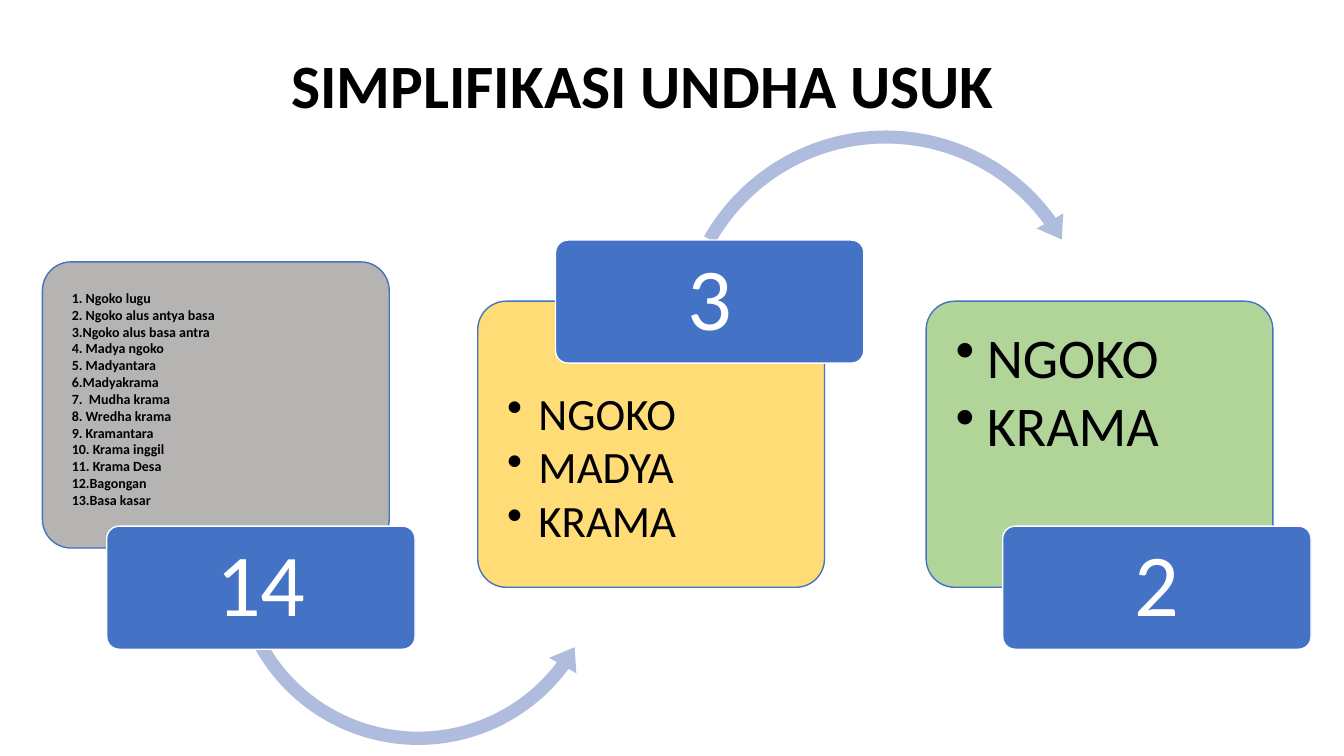
import lxml.etree
import pptx
import pptx.dml.color
import pptx.enum.shapes
import pptx.enum.text
import pptx.oxml.ns
import pptx.util

Cm, Pt = pptx.util.Cm, pptx.util.Pt
qn = pptx.oxml.ns.qn
SHAPE = pptx.enum.shapes.MSO_SHAPE
ALIGN = pptx.enum.text.PP_ALIGN
ANCHOR = pptx.enum.text.MSO_ANCHOR

COLORS = {
    "gray": "AFABAB", "yellow": "FFD966", "green": "A9D18E",
    "blue": "4472C4", "arrow": "B0BCDE", "black": "000000", "white": "FFFFFF",
}
PANEL_SIZE = (8.74, 7.21)
CARD_SIZE = (7.77, 3.1)
VARIETIES = [
    " Ngoko lugu", " Ngoko alus antya basa", "Ngoko alus basa antra",
    " Madya ngoko", " Madyantara", "Madyakrama", "  Mudha krama",
    " Wredha krama", " Kramantara", " Krama inggil", " Krama Desa",
    "Bagongan", "Basa kasar",
]
STAGES = [
    {"panel": (1.07, 6.6), "color": "gray", "lines": VARIETIES, "size": 10,
     "bold": True, "top": 0.53, "hang": 0.16, "bullet": ("buAutoNum", "type", "arabicPeriod"),
     "arrow": (SHAPE.LEFT_CIRCULAR_ARROW, 5.61, 9.14, 9.86,
               (0.034, 4.189, 21.944, 90.245, 0.04)),
     "card": (2.69, 13.26), "number": "14"},
    {"panel": (12.04, 7.59), "color": "yellow", "lines": ["NGOKO", "MADYA", "KRAMA"],
     "size": 32, "bold": False, "top": 2.06, "hang": 0.79, "bullet": ("buChar", "char", "•"),
     "arrow": (SHAPE.CIRCULAR_ARROW, 16.84, 3.07, 10.97,
               (0.03, 3.733, 194.512, 125.755, 0.035)),
     "card": (14, 6.05), "number": "3"},
    {"panel": (23.34, 7.59), "color": "green", "lines": ["NGOKO", "KRAMA"],
     "size": 40, "bold": False, "top": 0.53, "hang": 0.79, "bullet": ("buChar", "char", "•"),
     "arrow": None, "card": (25.27, 13.26), "number": "2"},
]


class Deck:
    font = "Calibri"

    def __init__(self):
        self.prs = pptx.Presentation()
        self.prs.slide_width, self.prs.slide_height = Cm(33.87), Cm(19.05)
        self.s = self.prs.slides.add_slide(self.prs.slide_layouts[6])

    def rgb(self, name):
        return pptx.dml.color.RGBColor.from_string(COLORS[name])

    def apply(self, obj, formats):
        for name, value in formats.items():
            setattr(obj, name, value)

    def text(self, tf, lines, size, color, **formats):
        tf.word_wrap = True
        for i, line in enumerate(lines):
            p = tf.paragraphs[0] if i == 0 else tf.add_paragraph()
            self.apply(p, {"line_spacing": 0.9, **formats})
            r = p.add_run()
            r.text = line
            self.apply(r.font, {"name": self.font, "size": Pt(size)})
            r.font.color.rgb = self.rgb(color)

    def shape(self, kind, x, y, w, h, fill, line=None, adjustments=()):
        sp = self.s.shapes.add_shape(kind, Cm(x), Cm(y), Cm(w), Cm(h))
        sp.shadow.inherit = False
        sp.fill.solid()
        sp.fill.fore_color.rgb = self.rgb(fill)
        if line:
            sp.line.color.rgb = self.rgb(line)
            sp.line.width = Pt(1)
        else:
            sp.line.fill.background()
        for i, value in enumerate(adjustments):
            sp.adjustments[i] = value
        return sp

    def title(self, text):
        tf = self.s.shapes.add_textbox(Cm(1.6), Cm(0.38), Cm(29.21), Cm(3.68)).text_frame
        tf.vertical_anchor = ANCHOR.MIDDLE
        self.text(tf, [text], 44, "black", alignment=ALIGN.CENTER)
        tf.paragraphs[0].runs[0].font.bold = True

    def panel(self, stage):
        sp = self.shape(SHAPE.ROUNDED_RECTANGLE, *stage["panel"], *PANEL_SIZE,
                        stage["color"], "blue", (0.1,))
        color = sp._element.spPr.find(qn("a:solidFill")).find(qn("a:srgbClr"))
        lxml.etree.SubElement(color, qn("a:alpha")).set("val", "90000")
        tf = sp.text_frame
        self.apply(tf, {"vertical_anchor": ANCHOR.TOP, "margin_left": Cm(0.53),
                        "margin_right": Cm(0.53), "margin_top": Cm(stage["top"]),
                        "margin_bottom": Cm(0.36)})
        self.text(tf, stage["lines"], stage["size"], "black", alignment=ALIGN.LEFT,
                  level=1, space_after=Pt(stage["size"] * 0.12))
        tag, key, value = stage["bullet"]
        for p in tf.paragraphs:
            p.runs[0].font.bold = stage["bold"]
            pPr = p._p.get_or_add_pPr()
            pPr.set("marL", str(Cm(stage["hang"])))
            pPr.set("indent", str(-Cm(stage["hang"])))
            lxml.etree.SubElement(pPr, qn("a:" + tag)).set(key, value)

    def arrow(self, kind, x, y, size, adjustments):
        self.shape(kind, x, y, size, size, "arrow", adjustments=adjustments)

    def card(self, position, number):
        sp = self.shape(SHAPE.ROUNDED_RECTANGLE, *position, *CARD_SIZE,
                        "blue", "white", (0.1,))
        sp.text_frame.vertical_anchor = ANCHOR.MIDDLE
        self.text(sp.text_frame, [number], 63, "white", alignment=ALIGN.CENTER)


def main():
    deck = Deck()
    deck.title("SIMPLIFIKASI UNDHA USUK")
    for stage in STAGES:
        deck.panel(stage)
        if stage["arrow"]:
            deck.arrow(*stage["arrow"])
        deck.card(stage["card"], stage["number"])
    deck.prs.save("out.pptx")


if __name__ == "__main__":
    main()
